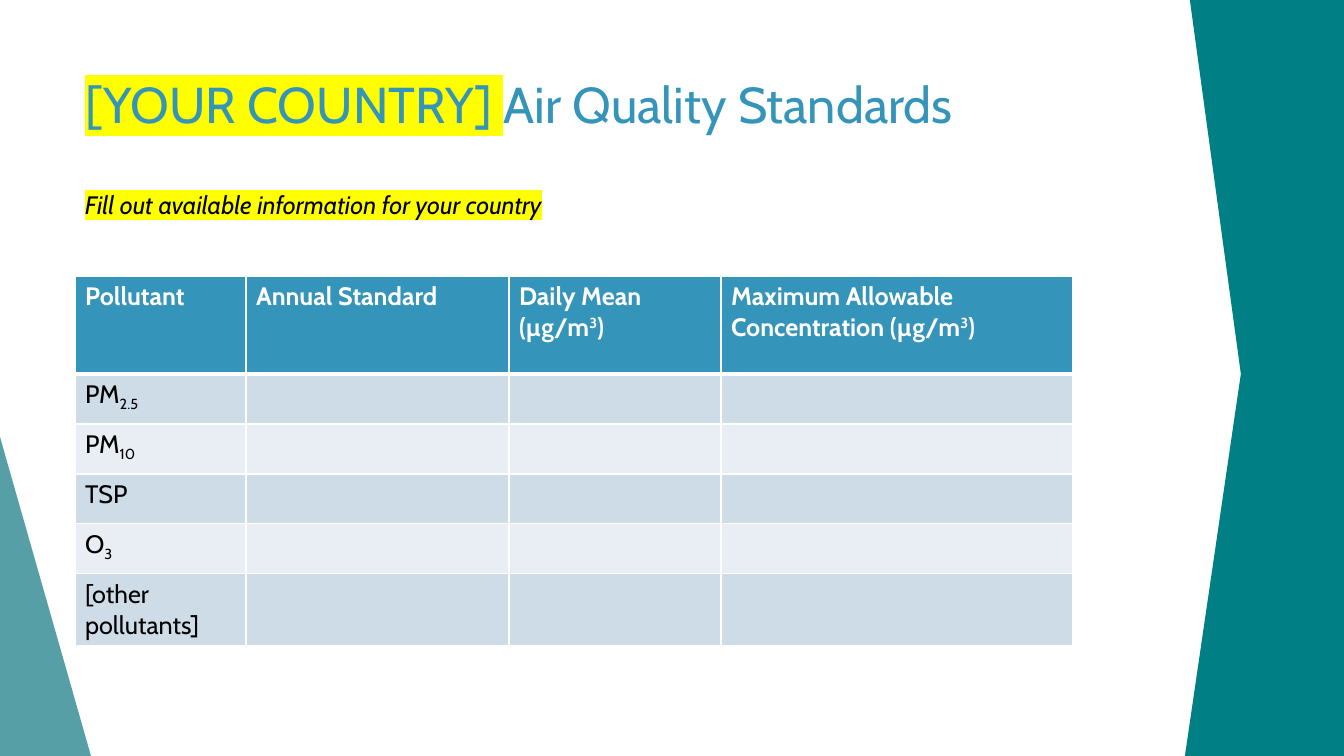
import pptx
import pptx.util
import pptx.dml.color
import pptx.enum.shapes
import pptx.enum.text
import pptx.oxml.ns
import lxml.etree

RGB = pptx.dml.color.RGBColor
SHAPE = pptx.enum.shapes.MSO_SHAPE
TEXT = pptx.enum.text
WHITE = RGB(0xFF, 0xFF, 0xFF)
BLACK = RGB(0, 0, 0)
YELLOW = RGB(0xFF, 0xFF, 0)
BLUE = RGB(0x34, 0x94, 0xBA)
TEAL = RGB(0, 0x80, 0x85)
SAGE = RGB(0x3A, 0x8F, 0x98)
BANDS = [RGB(0xCE, 0xDC, 0xE7), RGB(0xE8, 0xEE, 0xF3)]
SUPER, SUB = 30000, -25000


def px(n):
    return round(n * 914400 / 100.8)


def child(parent, tag, **attrs):
    return lxml.etree.SubElement(parent, pptx.oxml.ns.qn(tag), **attrs)


class Deck:
    font = "Cabin"

    def __init__(self):
        self.prs = pptx.Presentation()
        self.prs.slide_width = px(1344)
        self.prs.slide_height = px(756)
        self.slide = self.prs.slides.add_slide(self.prs.slide_layouts[5])
        self.shapes = self.slide.shapes

    def run(self, para, text, size, color, bold=False, italic=False,
            mark=None, base=0):
        run = para.add_run()
        run.text = text
        run.font.size = pptx.util.Pt(size)
        run.font.bold = bold
        run.font.italic = italic
        run.font.color.rgb = color
        run.font.name = self.font
        props = run._r.get_or_add_rPr()
        if base:
            props.set("baseline", str(base))
        if mark:
            light = child(props, "a:highlight")
            child(light, "a:srgbClr", val=str(mark))
            props.find(pptx.oxml.ns.qn("a:solidFill")).addnext(light)

    def paint(self, shape, color, alpha=100):
        shape.shadow.inherit = False
        shape.fill.solid()
        shape.fill.fore_color.rgb = color
        shape.line.fill.background()
        if alpha < 100:
            tone = shape.fill._xPr.find(".//" + pptx.oxml.ns.qn("a:srgbClr"))
            child(tone, "a:alpha", val=str(alpha * 1000))

    def wedge(self, box, color, alpha):
        shape = self.shapes.add_shape(SHAPE.RIGHT_TRIANGLE, *map(px, box))
        self.paint(shape, color, alpha)

    def outline(self, points, color):
        form = self.shapes.build_freeform(*points[0], scale=px(1))
        form.add_line_segments(points[1:], close=True)
        self.paint(form.convert_to_shape(), color)

    def frame(self, shape):
        frame = shape.text_frame
        frame.word_wrap = True
        frame.auto_size = TEXT.MSO_AUTO_SIZE.NONE
        frame.vertical_anchor = TEXT.MSO_ANCHOR.TOP
        para = frame.paragraphs[0]
        para.alignment = TEXT.PP_ALIGN.LEFT
        return para

    def title(self, box, parts):
        shape = self.shapes.title
        shape.left, shape.top, shape.width, shape.height = map(px, box)
        para = self.frame(shape)
        for text, mark in parts:
            self.run(para, text, 36, BLUE, mark=mark)

    def note(self, box, text):
        shape = self.shapes.add_textbox(*map(px, box))
        self.run(self.frame(shape), text, 18, BLACK, italic=True, mark=YELLOW)

    def cell(self, cell, parts, fill, color, bold, edges):
        props = cell._tc.get_or_add_tcPr()
        for side, width in zip("LRTB", edges):
            line = child(props, "a:ln" + side, w=str(pptx.util.Pt(width)))
            child(child(line, "a:solidFill"), "a:srgbClr", val=str(WHITE))
        cell.fill.solid()
        cell.fill.fore_color.rgb = fill
        for text, base in parts:
            self.run(cell.text_frame.paragraphs[0], text, 18, color,
                     bold=bold, base=base)

    def table(self, left, top, cols, rows, heads, names):
        table = self.shapes.add_table(
            len(rows), len(cols), px(left), px(top),
            px(sum(cols)), px(sum(rows))).table
        for col, width in zip(table.columns, cols):
            col.width = px(width)
        for row, height in zip(table.rows, rows):
            row.height = px(height)
        for c, parts in enumerate(heads):
            self.cell(table.cell(0, c), parts, BLUE, WHITE, True, (1, 1, 1, 3))
        for r, parts in enumerate(names, 1):
            edges = (1, 1, 3 if r == 1 else 1, 1)
            for c in range(len(cols)):
                self.cell(table.cell(r, c), parts if c == 0 else [],
                          BANDS[(r - 1) % 2], BLACK, False, edges)


def main():
    deck = Deck()

    # Side shapes
    deck.wedge((0, 437, 91, 319), SAGE, 85)
    deck.outline([(1344, 0), (1344, 756), (1185, 756), (1241, 374),
                  (1190, 0)], TEAL)

    # Title and prompt
    deck.title((75, 68, 1202, 145), [("[YOUR COUNTRY] ", YELLOW),
                                     ("Air Quality Standards", None)])
    deck.note((75, 184, 575, 40),
              "Fill out available information for your country")

    # Standards table
    heads = [
        [("Pollutant", 0)],
        [("Annual Standard", 0)],
        [("Daily Mean (µg/m", 0), ("3", SUPER), (")", 0)],
        [("Maximum Allowable Concentration (µg/m", 0), ("3", SUPER), (")", 0)],
    ]
    names = [
        [("PM", 0), ("2.5", SUB)],
        [("PM", 0), ("10", SUB)],
        [("TSP", 0)],
        [("O", 0), ("3", SUB)],
        [("[other pollutants]", 0)],
    ]
    deck.table(75, 276, [171, 263, 212, 352], [98] + [50] * 4 + [69],
               heads, names)

    deck.prs.save("out.pptx")


if __name__ == "__main__":
    main()
